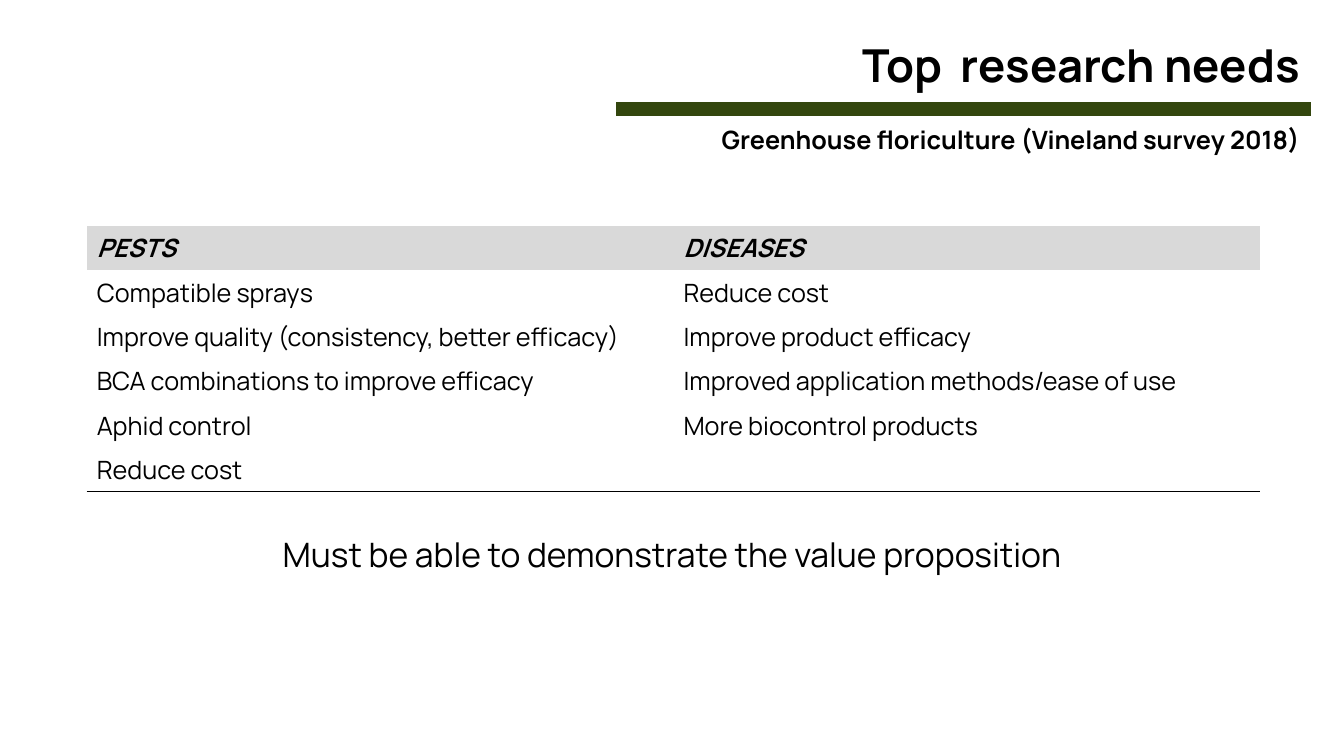
"""Build the slide on top research needs in greenhouse floriculture."""
import lxml.etree
import pptx
import pptx.dml.color
import pptx.enum.shapes
import pptx.enum.text
import pptx.oxml
import pptx.oxml.ns
import pptx.util

Inches = pptx.util.Inches
Pt = pptx.util.Pt
ALIGN = pptx.enum.text.PP_ALIGN
ANCHOR = pptx.enum.text.MSO_ANCHOR

TITLE = "Top  research needs"
SUBTITLE = "Greenhouse floriculture (Vineland survey 2018)"
NEEDS = [
    ("PESTS", "DISEASES"),
    ("Compatible sprays", "Reduce cost"),
    ("Improve quality (consistency, better efficacy)", "Improve product efficacy"),
    ("BCA combinations to improve efficacy", "Improved application methods/ease of use"),
    ("Aphid control", "More biocontrol products"),
    ("Reduce cost", ""),
]
CONCLUSION = "Must be able to demonstrate the value proposition"

THEME = {
    "font": "Manrope",
    "text": "000000",
    "rule": "33460E",
    "header": "D9D9D9",
    "title_size": 32.4,
    "body_size": 18,
    "conclusion_size": 24,
    "rule_width": 10,
    "border_width": 1,
    "table_style": "{2D5ABB26-0587-4C30-8999-92F81FD0307C}",
}
TABLE_LEFT, TABLE_TOP, COLUMN_WIDTH, ROW_HEIGHT = 0.86, 2.24, 5.82, 0.44


def color(name):
    return pptx.dml.color.RGBColor.from_string(THEME[name])


def write(text_frame, text, size, bold=False, italic=False, align=ALIGN.LEFT):
    text_frame.text = text
    paragraph = text_frame.paragraphs[0]
    paragraph.alignment = align
    for run in paragraph.runs:
        run.font.name = THEME["font"]
        run.font.size = Pt(THEME[size])
        run.font.bold = bold
        run.font.italic = italic
        run.font.color.rgb = color("text")


def add_text(slide, box, text, size, bold, align, anchor=ANCHOR.TOP):
    shape = slide.shapes.add_textbox(*(Inches(length) for length in box))
    shape.text_frame.word_wrap = True
    shape.text_frame.vertical_anchor = anchor
    write(shape.text_frame, text, size, bold, align=align)


def add_rule(slide):
    rule = slide.shapes.add_connector(
        pptx.enum.shapes.MSO_CONNECTOR.STRAIGHT,
        Inches(6.11), Inches(1.08), Inches(13), Inches(1.08))
    rule.line.color.rgb = color("rule")
    rule.line.width = Pt(THEME["rule_width"])
    lxml.etree.SubElement(
        rule._element.spPr, pptx.oxml.ns.qn("a:effectLst"))


def add_bottom_border(cell):
    border = pptx.oxml.parse_xml(
        f'<a:lnB {pptx.oxml.ns.nsdecls("a")} w="{Pt(THEME["border_width"])}">'
        f'<a:solidFill><a:srgbClr val="{THEME["text"]}"/></a:solidFill></a:lnB>')
    cell._tc.get_or_add_tcPr().insert(0, border)


def add_needs_table(slide):
    row_count, column_count = len(NEEDS), len(NEEDS[0])
    table = slide.shapes.add_table(
        row_count, column_count, Inches(TABLE_LEFT), Inches(TABLE_TOP),
        Inches(COLUMN_WIDTH * column_count), Inches(ROW_HEIGHT * row_count)).table
    table.first_row = False
    table.horz_banding = False
    style = table._tbl.tblPr.find(pptx.oxml.ns.qn("a:tableStyleId"))
    style.text = THEME["table_style"]
    for row_index, row in enumerate(NEEDS):
        is_header = row_index == 0
        for column_index, text in enumerate(row):
            cell = table.cell(row_index, column_index)
            cell.vertical_anchor = ANCHOR.MIDDLE
            write(cell.text_frame, text, "body_size", is_header, is_header)
            if is_header:
                cell.fill.solid()
                cell.fill.fore_color.rgb = color("header")
            else:
                cell.fill.background()
            if row_index == row_count - 1:
                add_bottom_border(cell)


def main():
    presentation = pptx.Presentation()
    presentation.slide_width = Inches(13.33)
    presentation.slide_height = Inches(7.5)
    slide = presentation.slides.add_slide(presentation.slide_layouts[6])
    add_rule(slide)
    add_text(slide, (0.41, 0.34, 12.58, 0.6), TITLE, "title_size", True,
             ALIGN.RIGHT, ANCHOR.MIDDLE)
    add_text(slide, (0.41, 1.18, 12.58, 0.41), SUBTITLE, "body_size", True, ALIGN.RIGHT)
    add_needs_table(slide)
    add_text(slide, (0.85, 5.25, 11.63, 0.5), CONCLUSION, "conclusion_size", False,
             ALIGN.CENTER)
    presentation.save("out.pptx")


if __name__ == "__main__":
    main()
